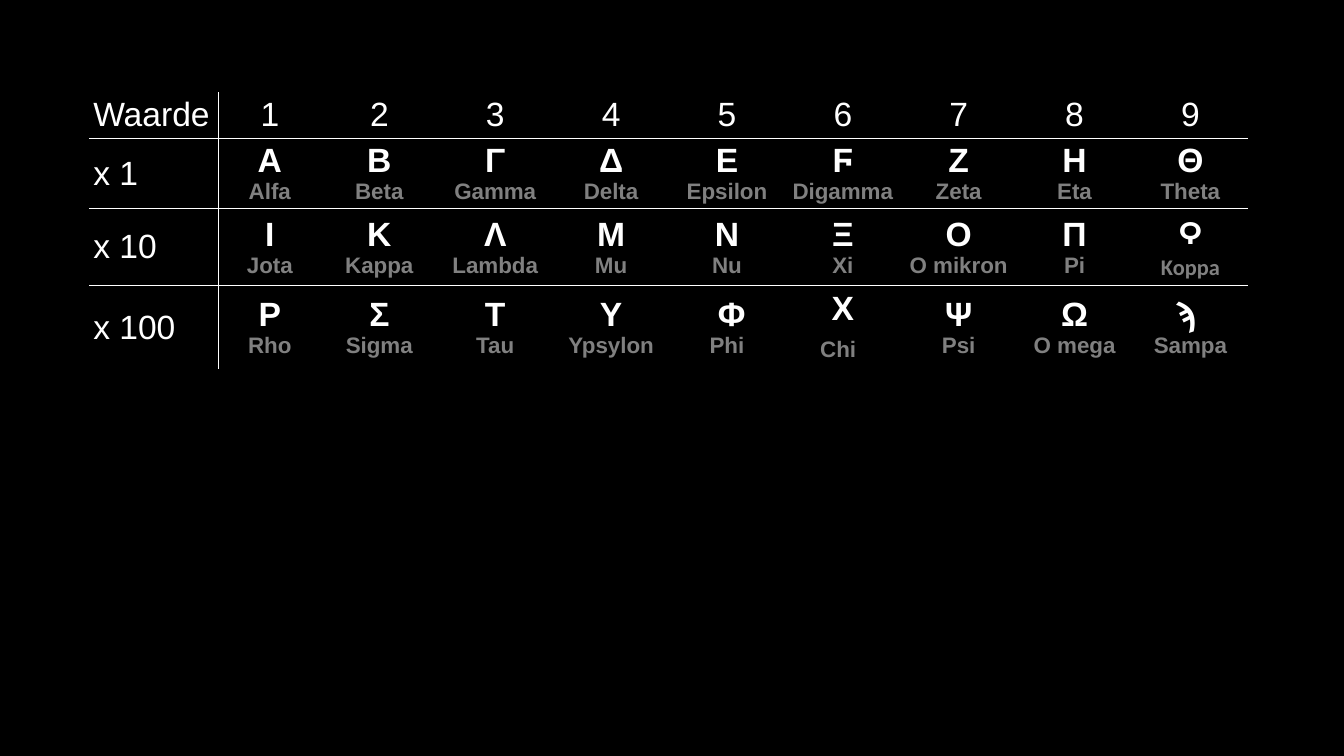
from pptx import Presentation
from pptx.dml.color import RGBColor
from pptx.enum.text import MSO_ANCHOR, PP_ALIGN
from pptx.oxml import parse_xml
from pptx.oxml.ns import nsdecls
from pptx.util import Cm, Pt

BLACK = RGBColor(0x00, 0x00, 0x00)
WHITE = RGBColor(0xFF, 0xFF, 0xFF)
GREY = RGBColor(0x80, 0x80, 0x80)
LEFT, CENTER = PP_ALIGN.LEFT, PP_ALIGN.CENTER
MIDDLE = MSO_ANCHOR.MIDDLE

WIDTHS = [3.25, 2.6] + [2.92] * 8
HEIGHTS = [1.16, 1.78, 1.94, 2.1]
HEADS = ["Waarde", "x 1", "x 10", "x 100"]
SIGNS = [
    ["Α", "Β", "Γ", "Δ", "Ε", "Ϝ", "Z", "Η", "Θ"],
    ["I", "K", "Λ", "M", "N", "Ξ", "O", "Π", "Ϙ"],
    ["Ρ", "Σ", "Τ", "Υ", " Φ", "Χ", "Ψ", "Ω", "ϡ "],
]
NAMES = [
    ["Alfa", "Beta", "Gamma", "Delta", "Epsilon", "Digamma", "Zeta", "Eta", "Theta"],
    ["Jota", "Kappa", "Lambda", "Mu", "Nu", "Xi", "O mikron", "Pi", "Koppa"],
    ["Rho", "Sigma", "Tau", "Ypsylon", "Phi", "Chi", "Psi", "O mega", "Sampa"],
]


def write(para, text, size=24, color=WHITE, bold=False, font="Arial", align=CENTER):
    para.alignment = align
    run = para.add_run()
    run.text = text
    run.font.size = Pt(size)
    run.font.color.rgb = color
    run.font.bold = bold
    run.font.name = font


deck = Presentation()
deck.slide_width, deck.slide_height = Cm(33.87), Cm(19.05)
slide = deck.slides.add_slide(deck.slide_layouts[6])
slide.background.fill.solid()
slide.background.fill.fore_color.rgb = BLACK

frame = slide.shapes.add_table(
    len(HEIGHTS), len(WIDTHS), Cm(2.25), Cm(2.32), Cm(sum(WIDTHS)), Cm(sum(HEIGHTS))
)
table = frame.table
table.first_row = table.horz_banding = False
for col, width in zip(table.columns, WIDTHS):
    col.width = Cm(width)
for row, height in zip(table.rows, HEIGHTS):
    row.height = Cm(height)

for r in range(len(HEIGHTS)):
    for c in range(len(WIDTHS)):
        cell = table.cell(r, c)
        cell.fill.background()
        cell.vertical_anchor = MIDDLE
        cell.margin_left = cell.margin_right = Cm(0.1)
        cell.margin_top = cell.margin_bottom = Cm(0.1)
        para = cell.text_frame.paragraphs[0]
        if c == 0:
            write(para, HEADS[r], align=LEFT)
        elif r == 0:
            write(para, str(c))
        else:
            sign, name = SIGNS[r - 1][c - 1], NAMES[r - 1][c - 1]
            font = "Calibri" if name == "Koppa" else "Arial"
            write(para, sign, bold=True, font=font)
            para = cell.text_frame.add_paragraph()
            write(para, name, size=16, color=GREY, bold=True, font=font)
            if name == "Chi":
                write(para, " ", bold=True)

        sides = {"L": c == 1, "R": c == 0, "T": r > 0, "B": r < len(HEIGHTS) - 1}
        props = cell._tc.get_or_add_tcPr()
        for spot, (side, drawn) in enumerate(sides.items()):
            paint = f'<a:solidFill><a:srgbClr val="{WHITE}"/></a:solidFill>' if drawn else "<a:noFill/>"
            line = f'<a:ln{side} {nsdecls("a")} w="{Pt(1)}">{paint}</a:ln{side}>'
            props.insert(spot, parse_xml(line))

deck.save("out.pptx")
